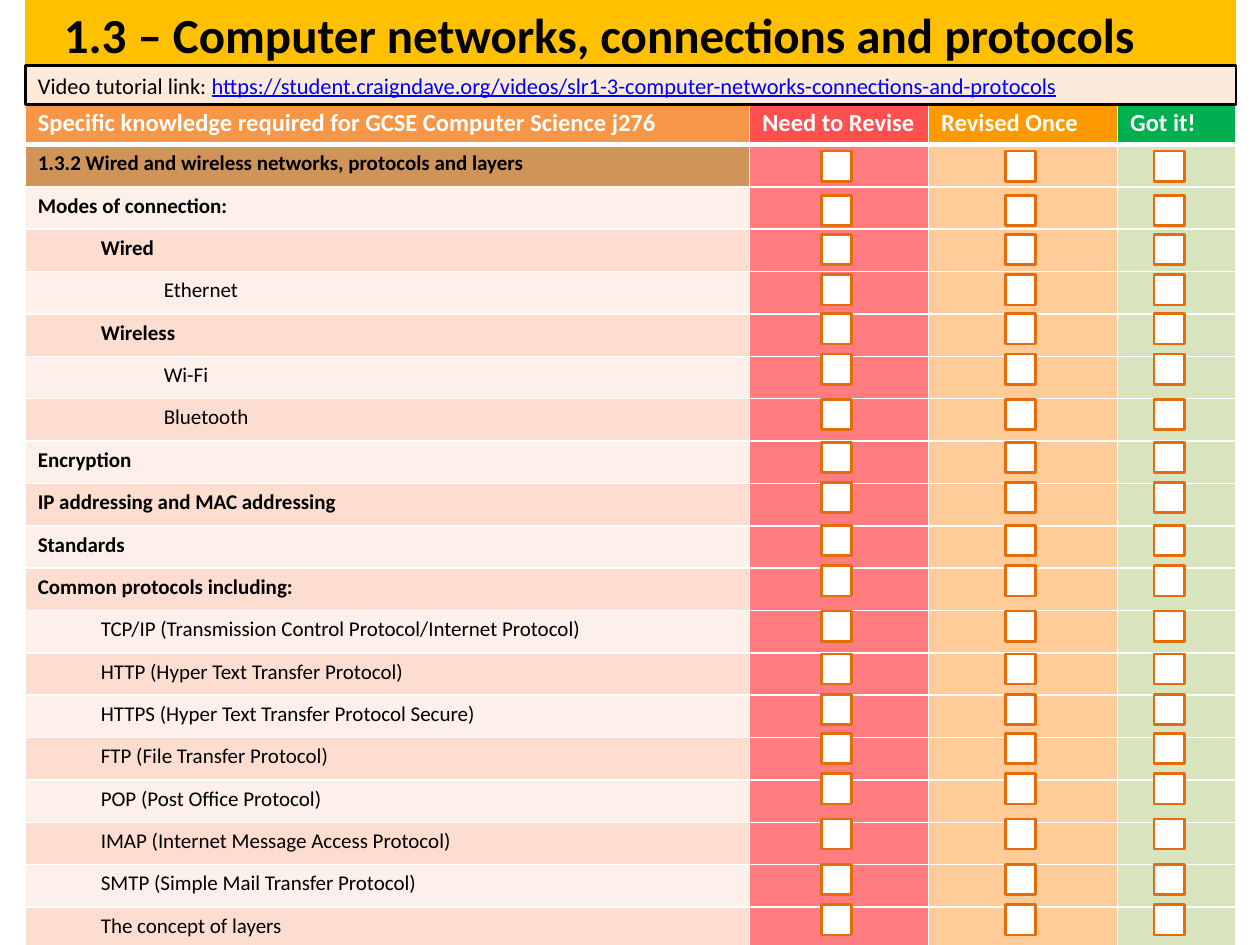
import dataclasses
import typing

import lxml.etree
import pptx
import pptx.dml.color
import pptx.enum.shapes
import pptx.enum.text
import pptx.oxml.ns
import pptx.util

SLIDE_WIDTH = pptx.util.Inches(10)
SLIDE_HEIGHT = pptx.util.Inches(7.5)
GRID_COLUMNS = 1000
GRID_ROWS = 750


@dataclasses.dataclass(frozen=True)
class Area:
    left: float
    top: float
    width: float
    height: float


@dataclasses.dataclass(frozen=True)
class Column:
    heading: str
    width: float
    heading_fill: str
    fill: str = ""
    checkbox_left: float = 0


@dataclasses.dataclass(frozen=True)
class Topic:
    text: str
    checkbox_top: float
    level: int = 0
    bold: bool = False


COLUMNS = [
    Column("Specific knowledge required for GCSE Computer Science j276", 575, "F79646"),
    Column("Need to Revise", 142, "FF5050", "FF7C80", 652),
    Column("Revised Once", 150, "FF9900", "FFCC99", 798),
    Column("Got it!", 94, "00B050", "D7E4BD", 916),
]
TOPICS = [
    Topic("1.3.2 Wired and wireless networks, protocols and layers", 120, bold=True),
    Topic("Modes of connection:", 155, bold=True),
    Topic("Wired", 186, 1, True),
    Topic("Ethernet", 218, 2),
    Topic("Wireless", 249, 1, True),
    Topic("Wi-Fi", 281, 2),
    Topic("Bluetooth", 317, 2),
    Topic("Encryption", 351, bold=True),
    Topic("IP addressing and MAC addressing", 383, bold=True),
    Topic("Standards", 417, bold=True),
    Topic("Common protocols including:", 449, bold=True),
    Topic("TCP/IP (Transmission Control Protocol/Internet Protocol)", 485, 1),
    Topic("HTTP (Hyper Text Transfer Protocol)", 519, 1),
    Topic("HTTPS (Hyper Text Transfer Protocol Secure)", 551, 1),
    Topic("FTP (File Transfer Protocol)", 582, 1),
    Topic("POP (Post Office Protocol)", 614, 1),
    Topic("IMAP (Internet Message Access Protocol)", 650, 1),
    Topic("SMTP (Simple Mail Transfer Protocol)", 686, 1),
    Topic("The concept of layers", 718, 1),
]
TITLE_AREA = Area(20, 0, 961, 54)
LINK_AREA = Area(20, 52, 961, 31)
TABLE_AREA = Area(20, 81, 961, 673)
CHECKBOX_SIZE = 24
SECTION_FILL = "D09458"
BAND_FILLS = ["FCDDCF", "FDEFE9"]


def across(columns: float) -> int:
    return round(SLIDE_WIDTH * columns / GRID_COLUMNS)


def down(rows: float) -> int:
    return round(SLIDE_HEIGHT * rows / GRID_ROWS)


def bounds(area: Area) -> tuple[int, int, int, int]:
    return across(area.left), down(area.top), across(area.width), down(area.height)


def color(value: str) -> pptx.dml.color.RGBColor:
    return pptx.dml.color.RGBColor.from_string(value)


def fill_solid(target: typing.Any, value: str) -> None:
    target.fill.solid()
    target.fill.fore_color.rgb = color(value)


def outline(shape: typing.Any, value: str) -> None:
    shape.line.color.rgb = color(value)
    shape.line.width = pptx.util.Pt(1.5)


def write(paragraph: typing.Any, text: str, *, size: float, fill: str = "000000",
          bold: bool = False, underline: bool = False) -> None:
    run = paragraph.add_run()
    run.text = text
    run.font.name = "Calibri"
    run.font.size = pptx.util.Pt(size)
    run.font.bold = bold
    run.font.underline = underline
    run.font.color.rgb = color(fill)


def place(placeholder: typing.Any, area: Area, fill: str) -> typing.Any:
    placeholder.left, placeholder.top, placeholder.width, placeholder.height = bounds(area)
    fill_solid(placeholder, fill)
    frame = placeholder.text_frame
    frame.auto_size = pptx.enum.text.MSO_AUTO_SIZE.NONE
    frame.vertical_anchor = pptx.enum.text.MSO_ANCHOR.MIDDLE
    frame.word_wrap = True
    return frame


def set_borders(cell: typing.Any, bottom: float) -> None:
    properties = cell._tc.get_or_add_tcPr()
    widths = {"a:lnL": 1, "a:lnR": 1, "a:lnT": 1, "a:lnB": bottom}
    for position, (tag, width) in enumerate(widths.items()):
        line = lxml.etree.Element(pptx.oxml.ns.qn(tag), w=str(pptx.util.Pt(width)))
        solid = lxml.etree.SubElement(line, pptx.oxml.ns.qn("a:solidFill"))
        lxml.etree.SubElement(solid, pptx.oxml.ns.qn("a:srgbClr"), val="FFFFFF")
        properties.insert(position, line)


def indent(paragraph: typing.Any, columns: float) -> None:
    properties = paragraph._p.get_or_add_pPr()
    properties.set("marL", str(across(columns)))
    properties.set("indent", "0")


def add_title(slide: typing.Any) -> None:
    frame = place(slide.shapes.title, TITLE_AREA, "FFC000")
    frame.margin_right = across(60)
    paragraph = frame.paragraphs[0]
    paragraph.alignment = pptx.enum.text.PP_ALIGN.CENTER
    write(paragraph, "1.3 – Computer networks, connections and protocols", size=28, bold=True)


def add_video_link(slide: typing.Any) -> None:
    body = slide.placeholders[1]
    frame = place(body, LINK_AREA, "FDEADA")
    outline(body, "000000")
    paragraph = frame.paragraphs[0]
    indent(paragraph, 0)
    lxml.etree.SubElement(paragraph._p.get_or_add_pPr(), pptx.oxml.ns.qn("a:buNone"))
    paragraph.space_before = pptx.util.Pt(0)
    write(paragraph, "Video tutorial link: ", size=12.8)
    write(paragraph,
          "https://student.craigndave.org/videos/slr1-3-computer-networks-connections-and-protocols",
          size=12.8, fill="0000FF", underline=True)
    body._element.getparent().append(body._element)


def add_checklist(slide: typing.Any) -> None:
    row_count = len(TOPICS) + 1
    table = slide.shapes.add_table(row_count, len(COLUMNS), *bounds(TABLE_AREA)).table
    for row in table.rows:
        row.height = down(TABLE_AREA.height / row_count)
    for index, column in enumerate(COLUMNS):
        table.columns[index].width = across(column.width)
        heading = table.cell(0, index)
        fill_solid(heading, column.heading_fill)
        set_borders(heading, 3)
        write(heading.text_frame.paragraphs[0], column.heading, size=14, fill="FFFFFF", bold=True)
    for row_index, topic in enumerate(TOPICS, start=1):
        for column_index, column in enumerate(COLUMNS):
            cell = table.cell(row_index, column_index)
            band_fill = SECTION_FILL if row_index == 1 else BAND_FILLS[(row_index + 1) % 2]
            fill_solid(cell, column.fill or band_fill)
            set_borders(cell, 1)
            if column.fill:
                cell.margin_top = cell.margin_bottom = 0
            else:
                paragraph = cell.text_frame.paragraphs[0]
                paragraph.level = topic.level
                indent(paragraph, 50 * topic.level)
                write(paragraph, topic.text, size=12, bold=topic.bold)


def add_checkbox(slide: typing.Any, area: Area) -> None:
    shape = slide.shapes.add_shape(pptx.enum.shapes.MSO_SHAPE.RECTANGLE, *bounds(area))
    shape.shadow.inherit = False
    fill_solid(shape, "FFFFFF")
    outline(shape, "E46C0A")


def main() -> None:
    presentation = pptx.Presentation()
    presentation.slide_width, presentation.slide_height = SLIDE_WIDTH, SLIDE_HEIGHT
    slide = presentation.slides.add_slide(presentation.slide_layouts[1])
    add_title(slide)
    add_checklist(slide)
    for topic in TOPICS:
        for column in COLUMNS[1:]:
            add_checkbox(slide, Area(column.checkbox_left, topic.checkbox_top,
                                     CHECKBOX_SIZE, CHECKBOX_SIZE))
    add_video_link(slide)
    presentation.save("out.pptx")


if __name__ == "__main__":
    main()
